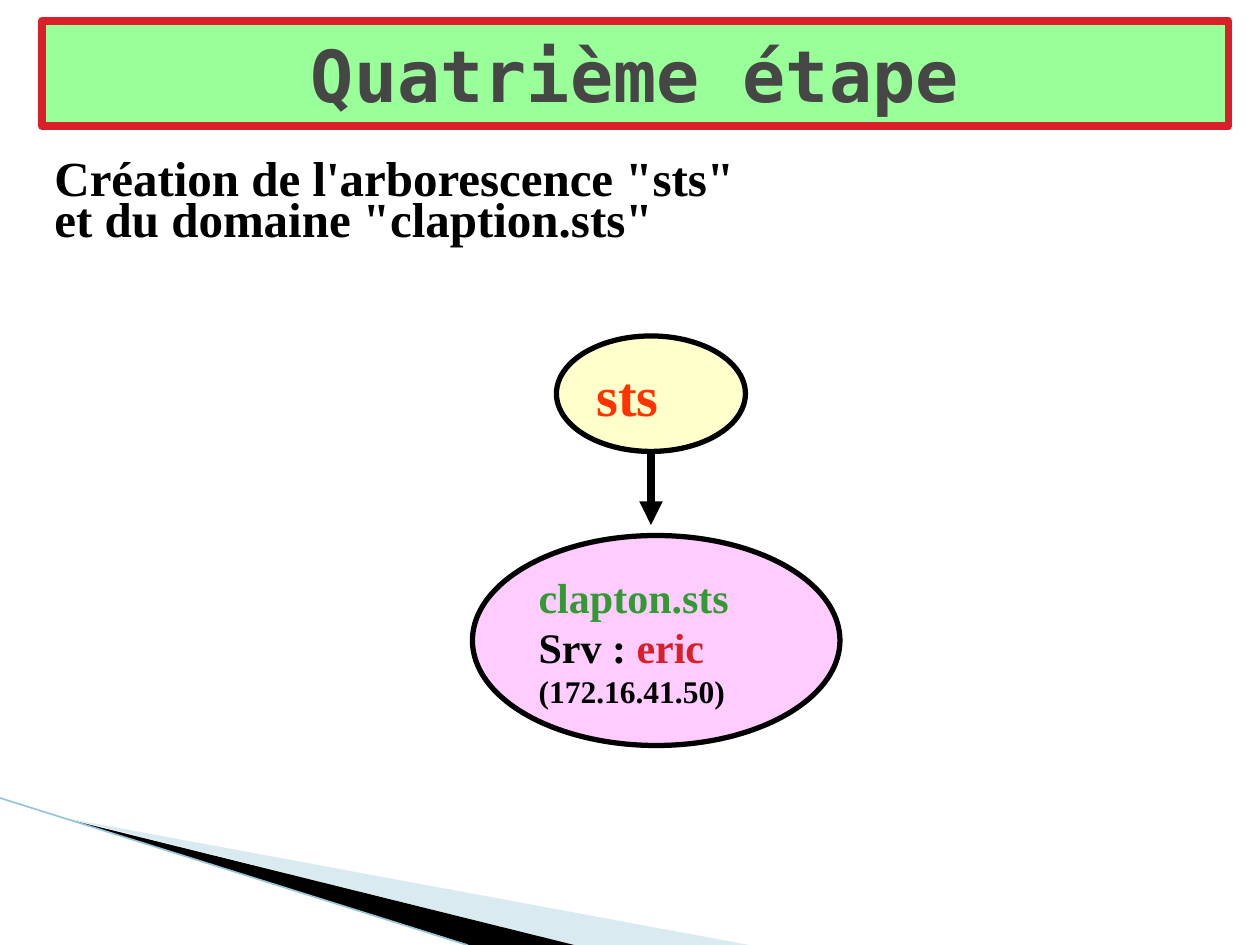
import pptx
import pptx.dml.color
import pptx.enum.shapes
import pptx.enum.text
import pptx.oxml
import pptx.oxml.ns
import pptx.util
from lxml import etree

Pt = pptx.util.Pt
RGBColor = pptx.dml.color.RGBColor
MSO_SHAPE = pptx.enum.shapes.MSO_SHAPE
MSO_CONNECTOR = pptx.enum.shapes.MSO_CONNECTOR
MSO_ANCHOR = pptx.enum.text.MSO_ANCHOR
MSO_AUTO_SIZE = pptx.enum.text.MSO_AUTO_SIZE
PP_ALIGN = pptx.enum.text.PP_ALIGN
qn = pptx.oxml.ns.qn

BLACK = RGBColor(0x00, 0x00, 0x00)
GREY = RGBColor(0x46, 0x46, 0x46)
RED = RGBColor(0xDA, 0x1F, 0x28)
ORANGE = RGBColor(0xFF, 0x33, 0x00)
GREEN = RGBColor(0x33, 0x99, 0x33)
LIGHT_GREEN = RGBColor(0x99, 0xFF, 0x99)
YELLOW = RGBColor(0xFF, 0xFF, 0xCC)
PINK = RGBColor(0xFF, 0xCC, 0xFF)
PALE_BLUE = RGBColor(0xA0, 0xCB, 0xDC)
LINE_BLUE = RGBColor(0x97, 0xC5, 0xD8)

SERIF = "Times New Roman"
MONO = "DejaVu Sans Mono"


def set_attributes(target, values):
    """Set each attribute named in values on the target."""
    for name, value in values.items():
        setattr(target, name, value)


def place(shape, box):
    """Move and size a shape to a (left, top, width, height) box in points."""
    names = ("left", "top", "width", "height")
    set_attributes(shape, {name: Pt(value) for name, value in zip(names, box)})


def paint(shape, fill, line=None, width=0):
    """Give a shape a solid fill and an optional outline."""
    shape.fill.solid()
    shape.fill.fore_color.rgb = fill
    if line is None:
        shape.line.fill.background()
    else:
        shape.line.color.rgb = line
        shape.line.width = Pt(width)


def write(shape, lines, font, frame, paragraph_format):
    """Fill a text frame with lines of (text, size, colour) runs."""
    text_frame = shape.text_frame
    set_attributes(text_frame, {"word_wrap": True, "auto_size": MSO_AUTO_SIZE.NONE, **frame})
    for index, runs in enumerate(lines):
        paragraph = text_frame.add_paragraph() if index else text_frame.paragraphs[0]
        set_attributes(paragraph, paragraph_format)
        for text, size, color in runs:
            run = paragraph.add_run()
            run.text = text
            set_attributes(run.font, {"name": font, "size": Pt(size), "bold": True})
            run.font.color.rgb = color


def add_line(shapes, start, end, color, width, arrow=False):
    """Draw a straight line, with a triangle at its end if asked."""
    points = [Pt(value) for value in (*start, *end)]
    connector = shapes.add_connector(MSO_CONNECTOR.STRAIGHT, *points)
    connector.line.color.rgb = color
    connector.line.width = Pt(width)
    if arrow:
        etree.SubElement(connector.line._get_or_add_ln(), qn("a:tailEnd"), type="triangle")
    etree.SubElement(connector._element.spPr, qn("a:effectLst"))


def add_wedge(shapes, origin, points, color, opacity=100):
    """Draw a filled outline whose points are relative to the origin."""
    left, top = origin
    corners = [(left + x, top + y) for x, y in points]
    builder = shapes.build_freeform(*corners[0], scale=Pt(1))
    builder.add_line_segments(corners[1:], close=True)
    wedge = builder.convert_to_shape()
    wedge.shadow.inherit = False
    paint(wedge, color)
    if opacity < 100:
        fill_color = wedge._element.spPr.find(qn("a:solidFill"))[0]
        etree.SubElement(fill_color, qn("a:alpha"), val=str(opacity * 1000))


def add_corner(slide, box):
    """Draw the sweeping wedges in the lower left corner."""
    left, top, width, height = box
    origin = (left + 38.5, top + 11.5)
    bottom = height - 11.5
    add_wedge(slide.shapes, origin, [(1, 0.5), (390, bottom), (290, bottom)], PALE_BLUE, 40)
    add_wedge(slide.shapes, origin, [(0, 0), (290, bottom), (229, bottom)], BLACK)
    add_line(slide.shapes, (left, top), (left + width, top + height), LINE_BLUE, 0.95)


def add_title(slide, box):
    """Format the title placeholder as a framed banner."""
    title = slide.shapes.title
    place(title, box)
    paint(title, LIGHT_GREEN, RED, 4.5)
    write(title, [[("Quatrième étape", 41, GREY)]], MONO,
          {"vertical_anchor": MSO_ANCHOR.MIDDLE}, {"alignment": PP_ALIGN.CENTER})


def add_statement(slide, box):
    """Write the two-line statement under the title."""
    statement = slide.shapes.add_textbox(*(Pt(value) for value in box))
    lines = ["Création de l'arborescence \"sts\"", "et du domaine \"claption.sts\""]
    write(statement, [[(line, 28, BLACK)] for line in lines], SERIF,
          {"vertical_anchor": MSO_ANCHOR.TOP}, {"line_spacing": 0.7})


def add_node(shapes, box, fill, lines):
    """Draw one outlined ellipse with its text."""
    node = shapes.add_shape(MSO_SHAPE.OVAL, *(Pt(value) for value in box))
    node.shadow.inherit = False
    paint(node, fill, BLACK, 3)
    write(node, lines, SERIF, {"vertical_anchor": MSO_ANCHOR.MIDDLE},
          {"alignment": PP_ALIGN.LEFT})


def add_tree(slide, box):
    """Draw the root, its domain and the arrow between them."""
    left, top, width, height = box
    shapes = slide.shapes.add_group_shape().shapes
    root_left, root_width, root_height = left + 48, 108, 66
    domain_height = 120
    add_node(shapes, (root_left, top, root_width, root_height), YELLOW, [[("sts", 32, ORANGE)]])
    add_node(shapes, (left, top + height - domain_height, width, domain_height), PINK, [
        [("clapton.sts", 24, GREEN)],
        [("Srv : ", 24, BLACK), ("eric", 24, RED)],
        [("(172.16.41.50)", 18, BLACK)],
    ])
    center, root_bottom = root_left + root_width / 2, top + root_height
    add_line(shapes, (center, root_bottom), (center, root_bottom + 42), BLACK, 4.5, arrow=True)


def main():
    """Build the slide and save it."""
    presentation = pptx.Presentation()
    set_attributes(presentation, {"slide_width": Pt(720), "slide_height": Pt(540)})
    slide = presentation.slides.add_slide(presentation.slide_layouts[5])
    add_corner(slide, (0, 456, 267, 84))
    add_title(slide, (24, 12, 678, 60))
    add_statement(slide, (24, 90, 672, 78))
    add_tree(slide, (270, 192, 210, 234))
    presentation.save("out.pptx")


if __name__ == "__main__":
    main()
